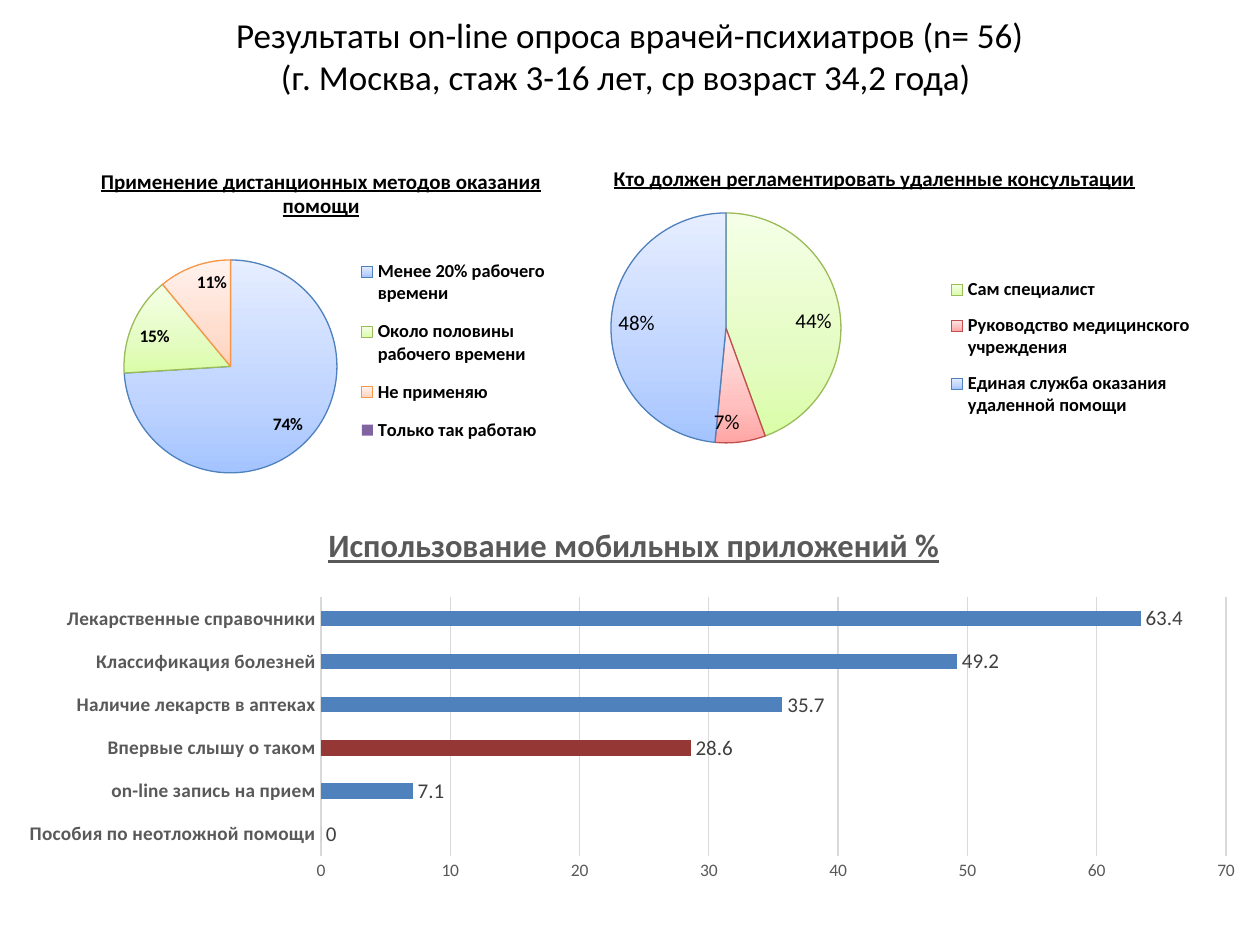
"""Build a slide of survey results with two pie charts and a bar chart."""
import copy

import lxml.etree
import pptx
import pptx.chart.data
import pptx.dml.color
import pptx.enum.chart
import pptx.enum.text
import pptx.oxml.ns
import pptx.util

PX = 914400 // 126
FONT = "Calibri"
COLORS = {
    "black": "000000", "grey": "595959", "label": "404040", "grid": "D9D9D9",
    "blue": "4F81BD", "green": "9BBB59", "orange": "F79646", "red": "C0504D",
    "purple": "8064A2", "dark_red": "953735",
}
GRADIENTS = {
    "blue": ("A4C4FF", "BFD4FF", "E6EEFF"),
    "green": ("DAFDA7", "E4FCC2", "F5FFE7"),
    "orange": ("FFD2BD", "FFDED0", "FFF2ED"),
    "red": ("FFA6A5", "FFC0BF", "FFE7E7"),
}
STOPS = (0, 0.35, 1)


def rgb(name):
    return pptx.dml.color.RGBColor.from_string(COLORS[name])


def emu(box):
    return [value * PX for value in box]


def set_font(font, size, color="black", bold=False, underline=False):
    font.name = FONT
    font.size = pptx.util.Pt(size)
    font.bold = bold
    font.underline = underline
    font.color.rgb = rgb(color)


def write_text(tf, text, **style):
    p = tf.paragraphs[0]
    p.alignment = pptx.enum.text.PP_ALIGN.CENTER
    for i, line in enumerate(text.split("\n")):
        if i:
            p.add_line_break()
        r = p.add_run()
        r.text = line
        set_font(r.font, **style)


def add_text(slide, box, text, **style):
    tf = slide.shapes.add_textbox(*emu(box)).text_frame
    tf.word_wrap = True
    tf.vertical_anchor = pptx.enum.text.MSO_ANCHOR.MIDDLE
    write_text(tf, text, **style)


def place(parent, index, chart_box, box, inner=False):
    """Give a chart part a manual layout; a box of two values sets only its corner."""
    qn = pptx.oxml.ns.qn
    for old in parent.findall(qn("c:layout")):
        parent.remove(old)
    layout = lxml.etree.Element(qn("c:layout"))
    manual = lxml.etree.SubElement(layout, qn("c:manualLayout"))
    left, top, width, height = chart_box
    parts = [("xMode", "edge"), ("yMode", "edge")]
    if inner:
        parts.insert(0, ("layoutTarget", "inner"))
    parts += [("x", (box[0] - left) / width), ("y", (box[1] - top) / height)]
    if len(box) == 4:
        parts += [("w", box[2] / width), ("h", box[3] / height)]
    for tag, value in parts:
        lxml.etree.SubElement(manual, qn("c:" + tag)).set("val", str(value))
    parent.insert(index, layout)


def add_chart(slide, kind, box, plot_box, cats, vals):
    data = pptx.chart.data.CategoryChartData()
    data.categories = cats
    data.add_series("Series 1", vals)
    chart = slide.shapes.add_chart(kind, *emu(box), data).chart
    set_font(chart.font, 10)
    chart.has_title = chart.has_legend = False
    place(chart._chartSpace.chart.plotArea, 0, box, plot_box, inner=True)
    return chart


def add_labels(plot, position, number_format, **style):
    plot.has_data_labels = True
    labels = plot.data_labels
    labels.position = position
    labels.number_format = number_format
    labels.number_format_is_linked = False
    set_font(labels.font, **style)
    return labels


def fill_gradient(point, name):
    fill = point.format.fill
    fill.gradient()
    fill.gradient_angle = 90
    stop_list = point._element.xpath(
        f"c:dPt[c:idx/@val='{point._idx}']/c:spPr/a:gradFill/a:gsLst")[0]
    stop_list.insert(1, copy.deepcopy(stop_list[0]))
    for stop, position, color in zip(point.format.fill.gradient_stops, STOPS, GRADIENTS[name]):
        stop.position = position
        stop.color.rgb = pptx.dml.color.RGBColor.from_string(color)
    point.format.line.color.rgb = rgb(name)
    point.format.line.width = pptx.util.Pt(0.75)


def add_pie(slide, box, title, title_at, plot_box, legend_box, slices, label_size, bold):
    cats, vals, names = zip(*slices)
    chart = add_chart(slide, pptx.enum.chart.XL_CHART_TYPE.PIE, box, plot_box, cats, vals)
    chart.has_title = True
    write_text(chart.chart_title.text_frame, title, size=12, bold=True, underline=True)
    place(chart.chart_title._element, 1, box, title_at)
    chart.has_legend = True
    legend = chart.legend
    legend.position = pptx.enum.chart.XL_LEGEND_POSITION.RIGHT
    legend.include_in_layout = False
    set_font(legend.font, 10.5, bold=True)
    place(legend._element, 1, box, legend_box)
    plot = chart.plots[0]
    plot.vary_by_categories = True
    labels = add_labels(plot, pptx.enum.chart.XL_LABEL_POSITION.INSIDE_END, '0%;;""',
                        size=label_size, bold=bold)
    labels.show_percentage = True
    labels.show_value = False
    for i, name in enumerate(names):
        point = plot.series[0].points[i]
        if name in GRADIENTS:
            fill_gradient(point, name)
        else:
            point.format.fill.solid()
            point.format.fill.fore_color.rgb = rgb(name)


def add_bars(slide, box, plot_box, bars):
    cats, vals, names = zip(*bars)
    chart = add_chart(slide, pptx.enum.chart.XL_CHART_TYPE.BAR_CLUSTERED, box, plot_box, cats, vals)
    plot = chart.plots[0]
    plot.vary_by_categories = False
    plot.gap_width = 182
    labels = add_labels(plot, pptx.enum.chart.XL_LABEL_POSITION.OUTSIDE_END, "General",
                        size=12, color="label")
    labels.show_value = True
    series = plot.series[0]
    series.format.fill.solid()
    series.format.fill.fore_color.rgb = rgb("blue")
    for i, name in enumerate(names):
        if name != "blue":
            fill = series.points[i].format.fill
            fill.solid()
            fill.fore_color.rgb = rgb(name)
    cat_axis, val_axis = chart.category_axis, chart.value_axis
    set_font(cat_axis.tick_labels.font, 11, "grey", bold=True)
    set_font(val_axis.tick_labels.font, 10, "grey")
    for axis in (cat_axis, val_axis):
        axis.major_tick_mark = axis.minor_tick_mark = pptx.enum.chart.XL_TICK_MARK.NONE
    val_axis.minimum_scale, val_axis.maximum_scale, val_axis.major_unit = 0, 70, 10
    val_axis.has_major_gridlines = True
    val_axis.format.line.fill.background()
    for line in (cat_axis.format.line, val_axis.major_gridlines.format.line):
        line.color.rgb = rgb("grid")
        line.width = pptx.util.Pt(0.75)


def main():
    prs = pptx.Presentation()
    prs.slide_width, prs.slide_height = emu((1260, 945))
    slide = prs.slides.add_slide(prs.slide_layouts[6])
    add_text(slide, (63, -24, 1134, 158),
             "Результаты on-line опроса врачей-психиатров (n= 56)\n"
             "(г. Москва, стаж 3-16 лет, ср возраст 34,2 года) ", size=20)
    add_pie(slide, (35, 144, 566, 348), "Применение дистанционных методов оказания помощи",
            (97, 163), (124, 260, 213, 213), (346, 245, 215, 212),
            [("Менее 20% рабочего времени", 74, "blue"),
             ("Около половины рабочего времени", 15, "green"),
             ("Не применяю", 11, "orange"),
             ("Только так работаю", 0, "purple")], 10, True)
    add_pie(slide, (481, 145, 750, 348), "Кто должен регламентировать удаленные консультации",
            (610, 160), (611, 213, 230, 230), (936, 265, 270, 166),
            [("Сам специалист", 44, "green"),
             ("Руководство медицинского учреждения", 7, "red"),
             ("Единая служба оказания удаленной помощи", 48, "blue")], 12, False)
    add_bars(slide, (5, 591, 1255, 295), (321, 597, 905, 259),
             [("Пособия по неотложной помощи", 0, "blue"),
              ("on-line запись на прием", 7.1, "blue"),
              ("Впервые слышу о таком", 28.6, "dark_red"),
              ("Наличие лекарств в аптеках", 35.7, "blue"),
              ("Классификация болезней", 49.2, "blue"),
              ("Лекарственные справочники", 63.4, "blue")])
    add_text(slide, (282, 519, 704, 52), "Использование мобильных приложений %",
             size=18.6, color="grey", bold=True, underline=True)
    prs.save("out.pptx")


if __name__ == "__main__":
    main()
